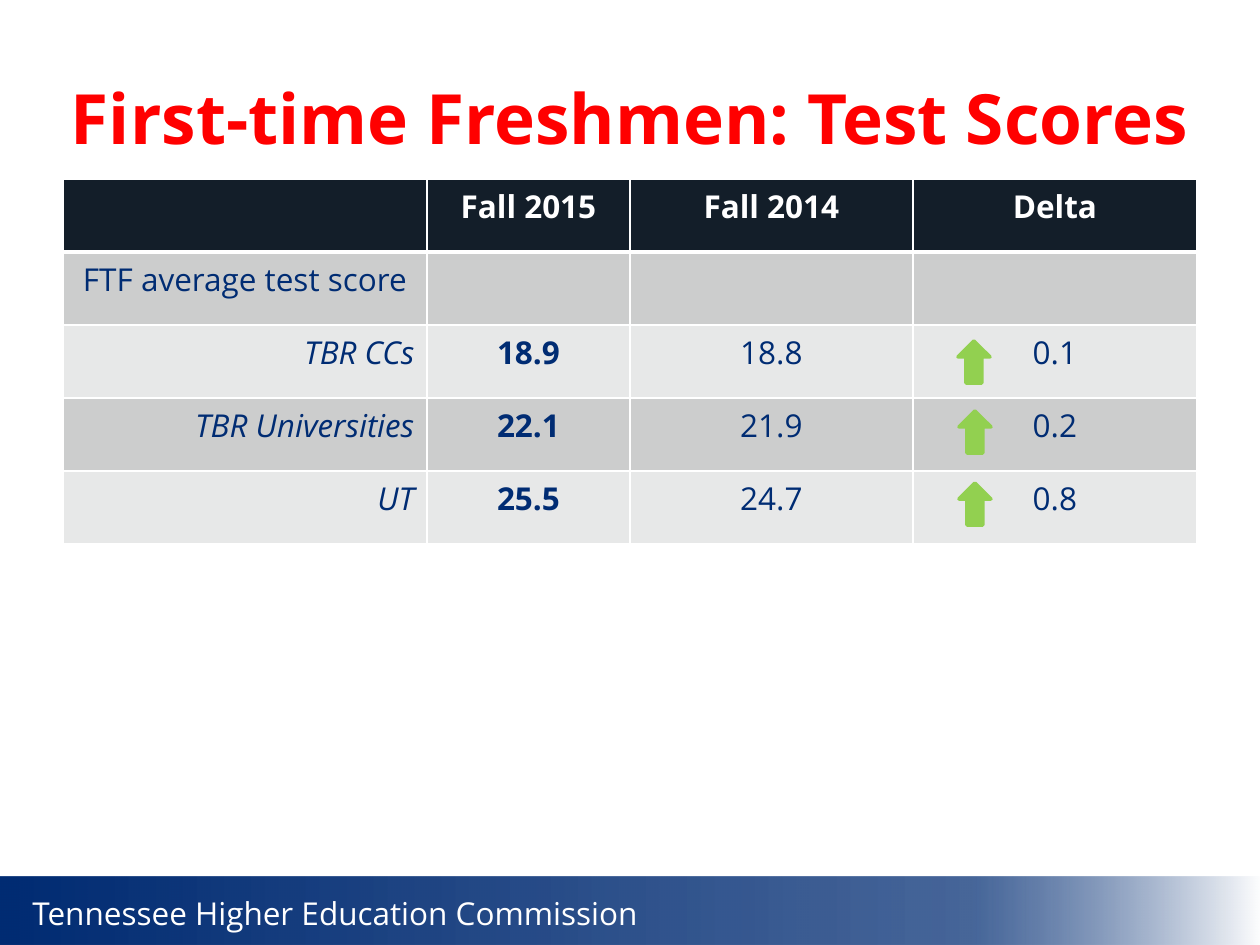
from dataclasses import dataclass

from lxml import etree
from pptx import Presentation
from pptx import util as u
from pptx.dml.color import RGBColor
from pptx.enum import shapes, text
from pptx.oxml.ns import qn

EMU_PER_PX = 914400 / 126
FONT = "Open Sans"
COLORS = {
    "navy": "002C73",
    "red": "FF0000",
    "white": "FFFFFF",
    "header": "131E29",
    "dark_band": "CCCDCD",
    "light_band": "E7E8E8",
    "green": "92D050",
}
COLUMN_WIDTHS = [364, 203, 283, 284]
ROW_HEIGHT = 73
HEADINGS = ["", "Fall 2015", "Fall 2014", "Delta"]
CENTER, RIGHT = text.PP_ALIGN.CENTER, text.PP_ALIGN.RIGHT


@dataclass
class ScoreRow:
    label: str
    values: tuple[str, str, str]
    label_align: text.PP_ALIGN = RIGHT
    label_italic: bool = True


@dataclass
class Arrow:
    left: int
    top: int


SCORE_ROWS = [
    ScoreRow("FTF average test score", ("", "", ""), CENTER, False),
    ScoreRow("TBR CCs", ("18.9", "18.8", "0.1")),
    ScoreRow("TBR Universities", ("22.1", "21.9", "0.2")),
    ScoreRow("UT", ("25.5", "24.7", "0.8")),
]
ARROWS = [Arrow(958, 341), Arrow(959, 411), Arrow(959, 483)]


def px(length: int) -> u.Emu:
    return u.Emu(round(length * EMU_PER_PX))


def rgb(name: str) -> RGBColor:
    return RGBColor.from_string(COLORS[name])


def add_run(paragraph, words: str, size: float, color: str,
            bold: bool = False, italic: bool = False) -> None:
    run = paragraph.add_run()
    run.text = words
    run.font.name = FONT
    run.font.size = u.Pt(size)
    run.font.bold = bold
    run.font.italic = italic
    run.font.color.rgb = rgb(color)


def fill_band(shape) -> None:
    """Fade the band from navy through translucent navy to white."""
    shape.fill.gradient()
    shape.fill.gradient_angle = 0
    stops = shape.fill._fill._gradFill.find(qn("a:gsLst"))
    for stop in list(stops):
        stops.remove(stop)
    for position, color, opacity in [(0, "navy", 100), (77, "navy", 72), (100, "white", 100)]:
        stop = etree.SubElement(stops, qn("a:gs"), pos=str(position * 1000))
        value = etree.SubElement(stop, qn("a:srgbClr"), val=COLORS[color])
        if opacity < 100:
            etree.SubElement(value, qn("a:alpha"), val=str(opacity * 1000))


def add_footer(slide) -> None:
    band = slide.shapes.add_shape(
        shapes.MSO_SHAPE.RECTANGLE, 0, px(877), px(1262), px(68))
    band.shadow.inherit = False
    band.line.fill.background()
    fill_band(band)
    box = slide.shapes.add_textbox(px(20), px(888), px(636), px(50))
    box.text_frame.word_wrap = False
    add_run(box.text_frame.paragraphs[0],
            "Tennessee Higher Education Commission", 18, "white")


def set_title(slide) -> None:
    title = slide.shapes.title
    title.left, title.top, title.width, title.height = px(42), px(38), px(1176), px(157)
    title.text_frame.vertical_anchor = text.MSO_ANCHOR.MIDDLE
    paragraph = title.text_frame.paragraphs[0]
    paragraph.alignment = CENTER
    add_run(paragraph, "First-time Freshmen: Test Scores", 39.6, "red", bold=True)


def set_borders(cell, top: int, bottom: int) -> None:
    """Draw white cell borders; top and bottom widths are in points."""
    properties = cell._tc.get_or_add_tcPr()
    for side, width in [("L", 1), ("R", 1), ("T", top), ("B", bottom)]:
        line = etree.SubElement(properties, qn(f"a:ln{side}"), w=str(u.Pt(width)))
        fill = etree.SubElement(line, qn("a:solidFill"))
        etree.SubElement(fill, qn("a:srgbClr"), val=COLORS["white"])


def write_cell(cell, words: str, color: str, align: text.PP_ALIGN,
               bold: bool = False, italic: bool = False) -> None:
    if words:
        paragraph = cell.text_frame.paragraphs[0]
        paragraph.alignment = align
        add_run(paragraph, words, 18, color, bold, italic)


def add_score_table(slide) -> None:
    row_count = len(SCORE_ROWS) + 1
    table = slide.shapes.add_table(
        row_count, len(HEADINGS), px(63), px(179),
        px(sum(COLUMN_WIDTHS)), px(ROW_HEIGHT * row_count)).table
    for column, width in zip(table.columns, COLUMN_WIDTHS):
        column.width = px(width)
    for row_index, row in enumerate(table.rows):
        row.height = px(ROW_HEIGHT)
        band = "header" if row_index == 0 else ("light_band", "dark_band")[row_index % 2]
        for cell in row.cells:
            set_borders(cell, 3 if row_index == 1 else 1, 3 if row_index == 0 else 1)
            cell.fill.solid()
            cell.fill.fore_color.rgb = rgb(band)
    for column_index, heading in enumerate(HEADINGS):
        write_cell(table.cell(0, column_index), heading, "white", CENTER, bold=True)
    for row_index, score in enumerate(SCORE_ROWS, start=1):
        write_cell(table.cell(row_index, 0), score.label, "navy",
                   score.label_align, italic=score.label_italic)
        for column_index, value in enumerate(score.values, start=1):
            write_cell(table.cell(row_index, column_index), value, "navy",
                       CENTER, bold=column_index == 1)


def add_arrow(slide, arrow: Arrow) -> None:
    shape = slide.shapes.add_shape(
        shapes.MSO_SHAPE.UP_ARROW, px(arrow.left), px(arrow.top), px(32), px(42))
    shape.shadow.inherit = False
    shape.fill.solid()
    shape.fill.fore_color.rgb = rgb("green")
    shape.line.color.rgb = rgb("green")
    shape.line.width = u.Pt(2)


def main() -> None:
    presentation = Presentation()
    presentation.slide_width, presentation.slide_height = px(1260), px(945)
    slide = presentation.slides.add_slide(presentation.slide_layouts[5])
    add_footer(slide)
    set_title(slide)
    add_score_table(slide)
    for arrow in ARROWS:
        add_arrow(slide, arrow)
    presentation.save("out.pptx")


if __name__ == "__main__":
    main()
